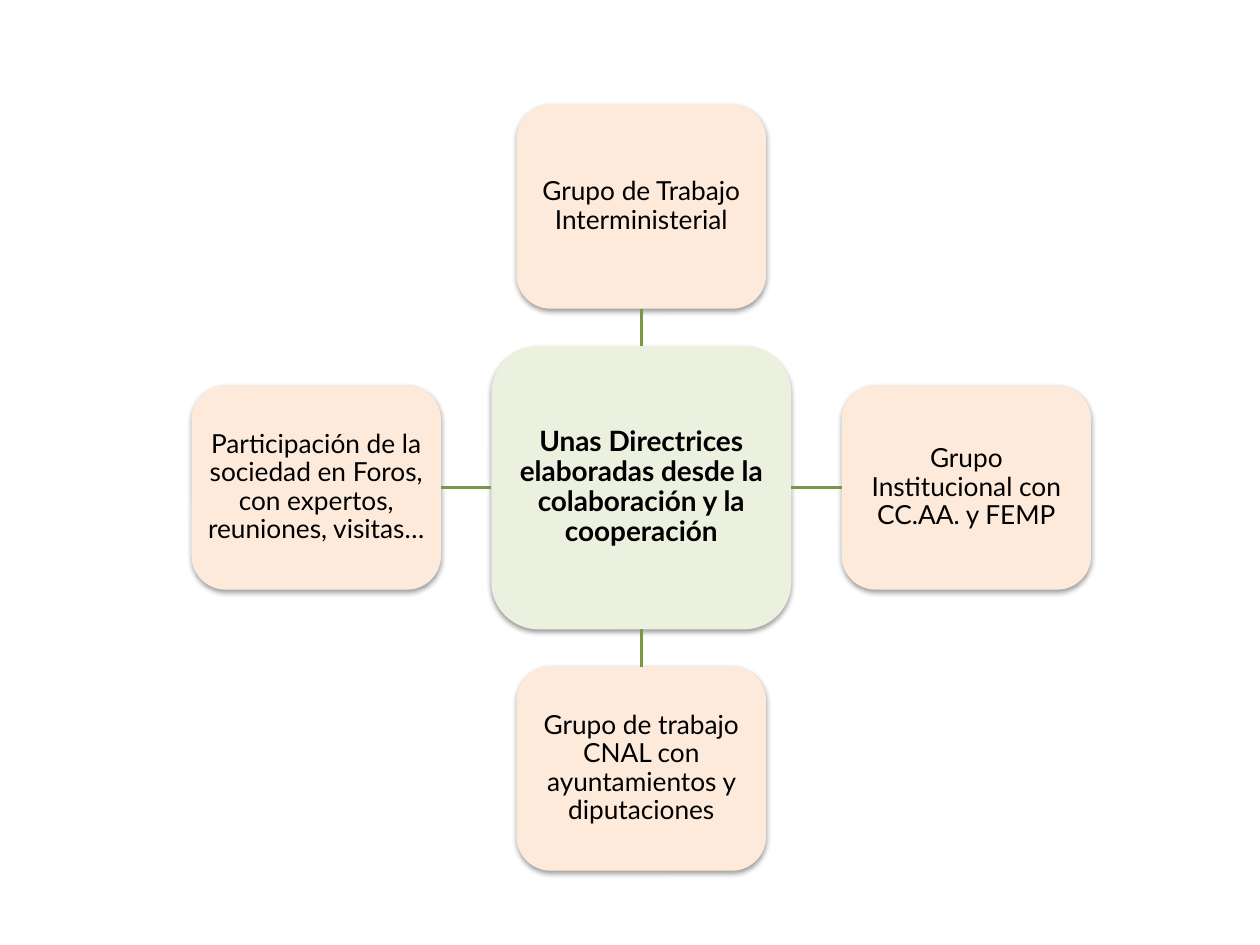
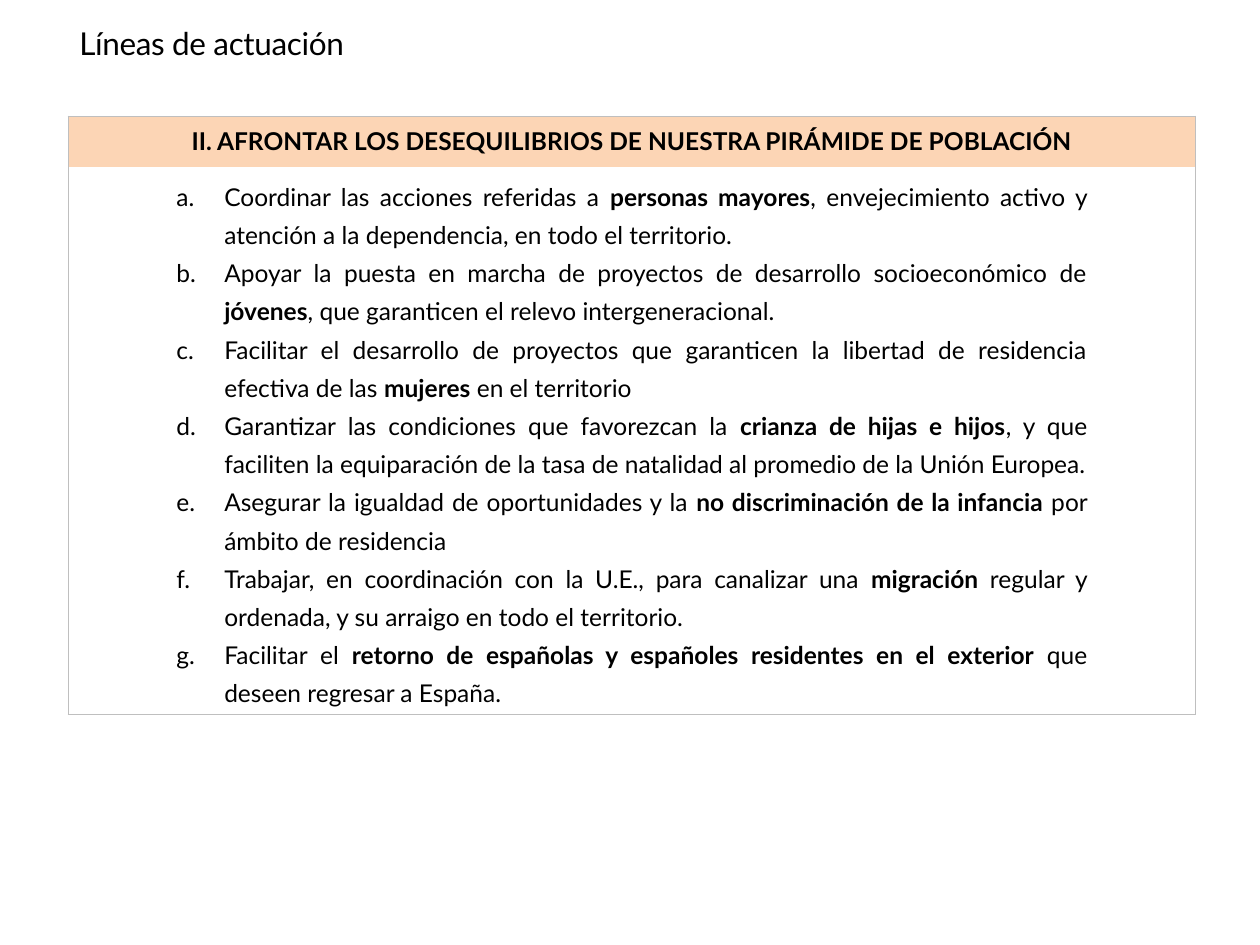
from lxml.etree import SubElement
from pptx import Presentation
from pptx.dml.color import RGBColor
from pptx.enum.shapes import MSO_CONNECTOR as CONN, MSO_SHAPE as SHAPE
from pptx.enum.text import MSO_ANCHOR as ANCHOR, MSO_AUTO_SIZE as AUTO, PP_ALIGN as ALIGN
from pptx.oxml.ns import qn
from pptx.util import Emu, Inches, Pt

FONT = "Lato"
COLORS = {
    "text": "000000",
    "center": "EBF1DE",
    "group": "FDEADA",
    "link": "7C9647",
    "header": "FCD5B5",
    "body": "FFFFFF",
    "border": "BFBFBF",
}
NO_STYLE = "{2D5ABB26-0587-4C30-8999-92F81FD0307C}"

HUB_X, HUB_Y = 5.09, 3.87
HUB_TEXT = "Unas Directrices elaboradas desde la colaboración y la cooperación"
# Text, direction from the hub (x, y), side of the hub, facing side of the group
TOP, LEFT, BOTTOM, RIGHT = range(4)
GROUPS = [
    ("Grupo de Trabajo Interministerial", 0, -1, TOP, BOTTOM),
    ("Grupo Institucional con CC.AA. y FEMP", 1, 0, RIGHT, LEFT),
    ("Grupo de trabajo CNAL con ayuntamientos y diputaciones", 0, 1, BOTTOM, TOP),
    ("Participación de la sociedad en Foros, con expertos, reuniones, visitas…",
     -1, 0, LEFT, RIGHT),
]

TABLE_TITLE = "II. AFRONTAR LOS DESEQUILIBRIOS DE NUESTRA PIRÁMIDE DE POBLACIÓN"
# Each action: plain start, bold key words, plain end
ACTIONS = [
    ("Coordinar las acciones referidas a ", "personas mayores",
     ", envejecimiento activo y atención a la dependencia, en todo el territorio."),
    ("Apoyar la puesta en marcha de proyectos de desarrollo socioeconómico de ", "jóvenes",
     ", que garanticen el relevo intergeneracional."),
    ("Facilitar el desarrollo de proyectos que garanticen la libertad de residencia "
     "efectiva de las ", "mujeres", " en el territorio"),
    ("Garantizar las condiciones que favorezcan la ", "crianza de hijas e hijos",
     ", y que faciliten la equiparación de la tasa de natalidad al promedio de la "
     "Unión Europea."),
    ("Asegurar la igualdad de oportunidades y la ", "no discriminación de la infancia",
     " por ámbito de residencia"),
    ("Trabajar, en coordinación con la U.E., para canalizar una ", "migración",
     " regular y ordenada, y su arraigo en todo el territorio."),
    ("Facilitar el ", "retorno de españolas y españoles residentes en el exterior ",
     "que deseen regresar a España."),
]


def rgb(name):
    return RGBColor.from_string(COLORS[name])


def add_run(p, text, size, bold=False):
    r = p.add_run()
    r.text = text
    r.font.name = FONT
    r.font.size = Pt(size)
    r.font.bold = bold
    r.font.color.rgb = rgb("text")
    return r


def add_soft_shadow(s):
    s.shadow.inherit = False
    effects = s._element.spPr.find(qn("a:effectLst"))
    shadow = SubElement(effects, qn("a:outerShdw"), blurRad=str(Pt(3.1)), dist=str(Pt(1.6)),
                        dir="5400000", rotWithShape="0")
    color = SubElement(shadow, qn("a:srgbClr"), val="000000")
    SubElement(color, qn("a:alpha"), val="38000")


def add_box(slide, x, y, w, h, text, fill, size, bold=False):
    """Add a rounded box centred on x, y."""
    s = slide.shapes.add_shape(SHAPE.ROUNDED_RECTANGLE, Inches(x - w / 2), Inches(y - h / 2),
                               Inches(w), Inches(h))
    s.fill.solid()
    s.fill.fore_color.rgb = rgb(fill)
    s.line.fill.background()
    add_soft_shadow(s)
    tf = s.text_frame
    tf.word_wrap = True
    tf.vertical_anchor = ANCHOR.MIDDLE
    tf.margin_left = tf.margin_right = tf.margin_top = tf.margin_bottom = Inches(0.04)
    p = tf.paragraphs[0]
    p.alignment = ALIGN.CENTER
    p.line_spacing = 0.9
    add_run(p, text, size, bold)
    return s


def link(slide, start, start_side, end, end_side):
    c = slide.shapes.add_connector(CONN.STRAIGHT, Emu(0), Emu(0), Emu(0), Emu(0))
    c.begin_connect(start, start_side)
    c.end_connect(end, end_side)
    c.line.color.rgb = rgb("link")
    c.line.width = Pt(2)
    SubElement(c._element.spPr, qn("a:effectLst"))


def set_title(slide, text):
    s = slide.shapes.title
    s.left, s.top, s.width, s.height = Inches(0.53), Inches(0.14), Inches(8.31), Inches(0.4)
    tf = s.text_frame
    tf.word_wrap = True
    tf.auto_size = AUTO.NONE
    tf.vertical_anchor = ANCHOR.MIDDLE
    p = tf.paragraphs[0]
    p.alignment = ALIGN.LEFT
    r = add_run(p, text, 18)
    r.font._element.set("spc", "-20")


def style_cell(cell, fill, sides):
    """Fill a cell and draw its border on the given sides, in the order L, R, T, B."""
    cell.vertical_anchor = ANCHOR.MIDDLE
    tc_pr = cell._tc.get_or_add_tcPr()
    for side in sides:
        ln = SubElement(tc_pr, qn(f"a:ln{side}"), w=str(Pt(0.5)))
        solid = SubElement(ln, qn("a:solidFill"))
        SubElement(solid, qn("a:srgbClr"), val=COLORS["border"])
    cell.fill.solid()
    cell.fill.fore_color.rgb = rgb(fill)


def add_action(p, parts):
    p.alignment = ALIGN.JUSTIFY
    p.line_spacing = 1.3
    p_pr = p._p.get_or_add_pPr()
    p_pr.set("marL", str(Inches(0.38)))
    p_pr.set("indent", str(-Inches(0.38)))
    SubElement(p_pr, qn("a:buAutoNum"), type="alphaLcPeriod")
    for text, bold in zip(parts, (False, True, False)):
        add_run(p, text, 14, bold)


def add_action_table(slide):
    frame = slide.shapes.add_table(2, 3, Inches(0.54), Inches(0.92), Inches(8.95), Inches(4.74))
    table = frame.table
    table.first_row = table.horz_banding = False
    table._tbl.tblPr.find(qn("a:tableStyleId")).text = NO_STYLE
    for column, width in zip(table.columns, (0.76, 7.43, 0.76)):
        column.width = Inches(width)
    for row, height in zip(table.rows, (0.4, 4.34)):
        row.height = Inches(height)
    for i, (fill, edge) in enumerate((("header", "T"), ("body", "B"))):
        for j, side in enumerate(("L", "", "R")):
            style_cell(table.cell(i, j), fill, side + edge)

    p = table.cell(0, 1).text_frame.paragraphs[0]
    p.alignment = ALIGN.CENTER
    add_run(p, TABLE_TITLE, 14, bold=True)
    tf = table.cell(1, 1).text_frame
    for i, parts in enumerate(ACTIONS):
        add_action(tf.add_paragraph() if i else tf.paragraphs[0], parts)


def build_collaboration(prs):
    slide = prs.slides.add_slide(prs.slide_layouts[6])
    hub = add_box(slide, HUB_X, HUB_Y, 2.38, 2.25, HUB_TEXT, "center", 16, bold=True)
    for text, dx, dy, hub_side, group_side in GROUPS:
        group = add_box(slide, HUB_X + 2.58 * dx, HUB_Y + 2.23 * dy, 1.98, 1.62,
                        text, "group", 15)
        link(slide, hub, hub_side, group, group_side)


def build_actions(prs):
    slide = prs.slides.add_slide(prs.slide_layouts[5])
    set_title(slide, "Líneas de actuación")
    add_action_table(slide)


def main():
    prs = Presentation()
    prs.slide_width, prs.slide_height = Inches(10), Inches(7.5)
    build_collaboration(prs)
    build_actions(prs)
    prs.save("out.pptx")


if __name__ == "__main__":
    main()
